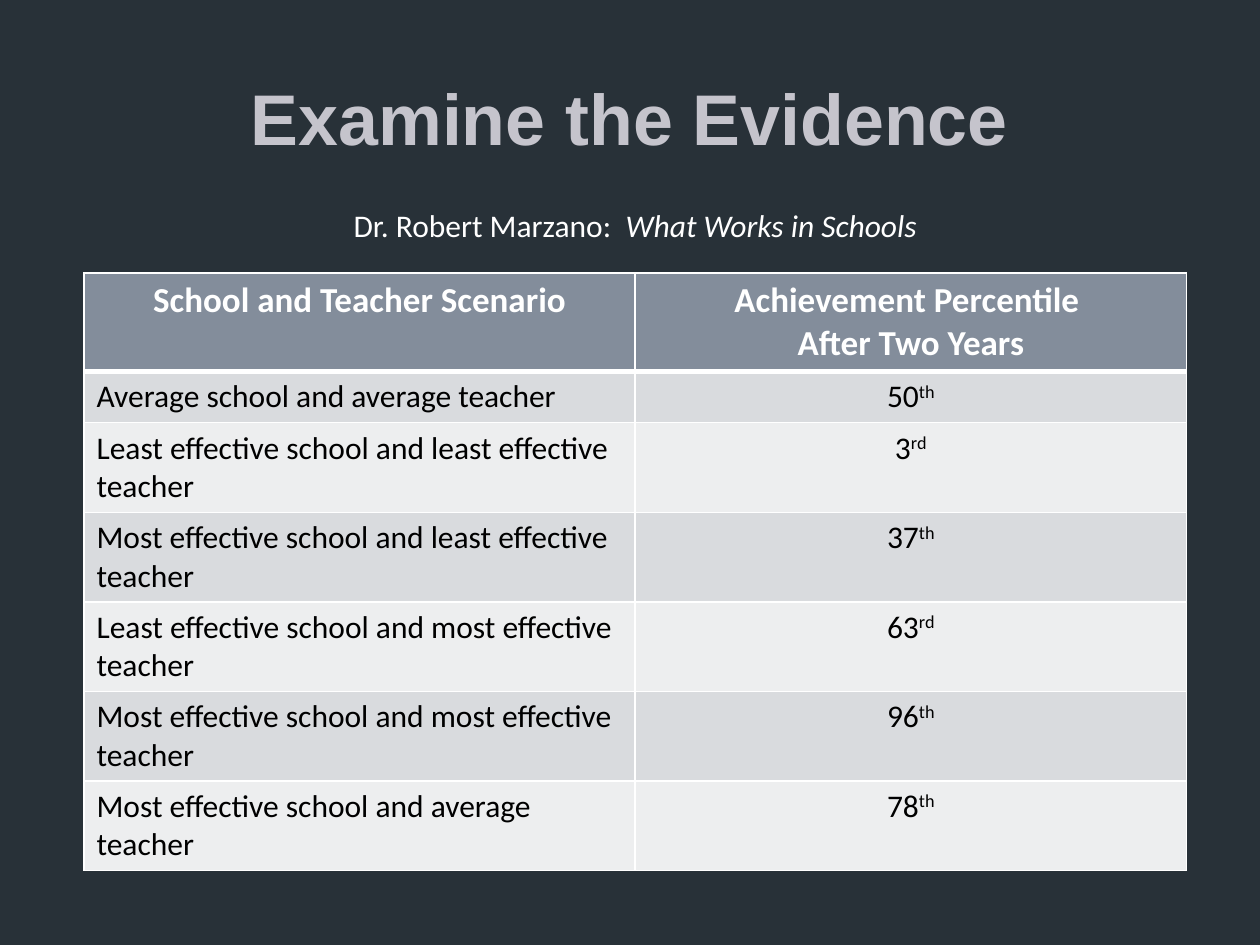
from lxml.etree import SubElement
from pptx import Presentation
from pptx.dml.color import RGBColor
from pptx.enum.text import MSO_ANCHOR, PP_ALIGN
from pptx.oxml.ns import qn
from pptx.util import Inches, Pt

DARK = RGBColor(0x28, 0x31, 0x38)
LILAC = RGBColor(0xC5, 0xC4, 0xCC)
SLATE = RGBColor(0x83, 0x8D, 0x9B)
BANDS = RGBColor(0xD9, 0xDB, 0xDE), RGBColor(0xED, 0xEE, 0xEF)
WHITE = RGBColor(0xFF, 0xFF, 0xFF)
BLACK = RGBColor(0, 0, 0)

HEADS = [["School and Teacher Scenario"],
         ["Achievement Percentile ", "After Two Years"]]
ROWS = [
    ("Average school and average teacher", "50", "th"),
    ("Least effective school and least effective teacher", "3", "rd"),
    ("Most effective school and least effective teacher", "37", "th"),
    ("Least effective school and most effective teacher", "63", "rd"),
    ("Most effective school and most effective teacher", "96", "th"),
    ("Most effective school and average teacher", "78", "th"),
]


def write(para, text, size=18, font="Calibri", color=WHITE, bold=False,
          slant=False, lift=0, align=PP_ALIGN.CENTER):
    para.alignment = align
    run = para.add_run()
    run.text = text
    face = run.font
    face.size, face.name, face.bold, face.italic = Pt(size), font, bold, slant
    face.color.rgb = color
    if lift:
        run._r.get_or_add_rPr().set("baseline", str(lift * 1000))


class Deck:
    unit = Inches(1) / 6
    line = WHITE

    def __init__(self):
        self.file = Presentation()
        self.file.slide_width, self.file.slide_height = self.span(60, 45)
        self.slide = self.file.slides.add_slide(self.file.slide_layouts[6])
        fill = self.slide.background.fill
        fill.solid()
        fill.fore_color.rgb = DARK

    def span(self, *cells):
        return [round(n * self.unit) for n in cells]

    def label(self, area, anchor=MSO_ANCHOR.TOP):
        frame = self.slide.shapes.add_textbox(*self.span(*area)).text_frame
        frame.word_wrap = True
        frame.vertical_anchor = anchor
        return frame.paragraphs[0]

    def table(self, left, top, width, rows, cols):
        area = self.span(left, top, width, sum(rows))
        grid = self.slide.shapes.add_table(len(rows), cols, *area).table
        for row, high in zip(grid.rows, self.span(*rows)):
            row.height = high
        return grid

    def paint(self, cell, color, top=1, foot=1):
        props = cell._tc.get_or_add_tcPr()
        for side, width in zip("LRTB", (1, 1, top, foot)):
            edge = SubElement(props, qn(f"a:ln{side}"), w=str(Pt(width)))
            fill = SubElement(edge, qn("a:solidFill"))
            SubElement(fill, qn("a:srgbClr"), val=str(self.line))
        cell.fill.solid()
        cell.fill.fore_color.rgb = color


def main():
    deck = Deck()
    grid = deck.table(4, 13, 52.5, [4.7, 2.4] + [4.25] * 5, 2)
    for col, lines in enumerate(HEADS):
        cell = grid.cell(0, col)
        deck.paint(cell, SLATE, foot=3)
        frame = cell.text_frame
        for i, text in enumerate(lines):
            para = frame.add_paragraph() if i else frame.paragraphs[0]
            write(para, text, size=20, bold=True)
    for row, (case, rank, mark) in enumerate(ROWS, 1):
        pair = [grid.cell(row, col) for col in range(2)]
        for cell in pair:
            deck.paint(cell, BANDS[(row - 1) % 2], top=3 if row == 1 else 1)
        name, score = [cell.text_frame.paragraphs[0] for cell in pair]
        write(name, case, color=BLACK, align=PP_ALIGN.LEFT)
        write(score, rank, color=BLACK)
        write(score, mark, color=BLACK, lift=30)

    title = deck.label((3, 1.8, 54, 7.5), MSO_ANCHOR.MIDDLE)
    write(title, "Examine the Evidence", size=41, font="Arial",
          color=LILAC, bold=True)
    credit = deck.label((10.5, 9.5, 39.5, 2.4))
    write(credit, "Dr. Robert Marzano:  ")
    write(credit, "What Works in Schools", slant=True)
    deck.file.save("out.pptx")


if __name__ == "__main__":
    main()
